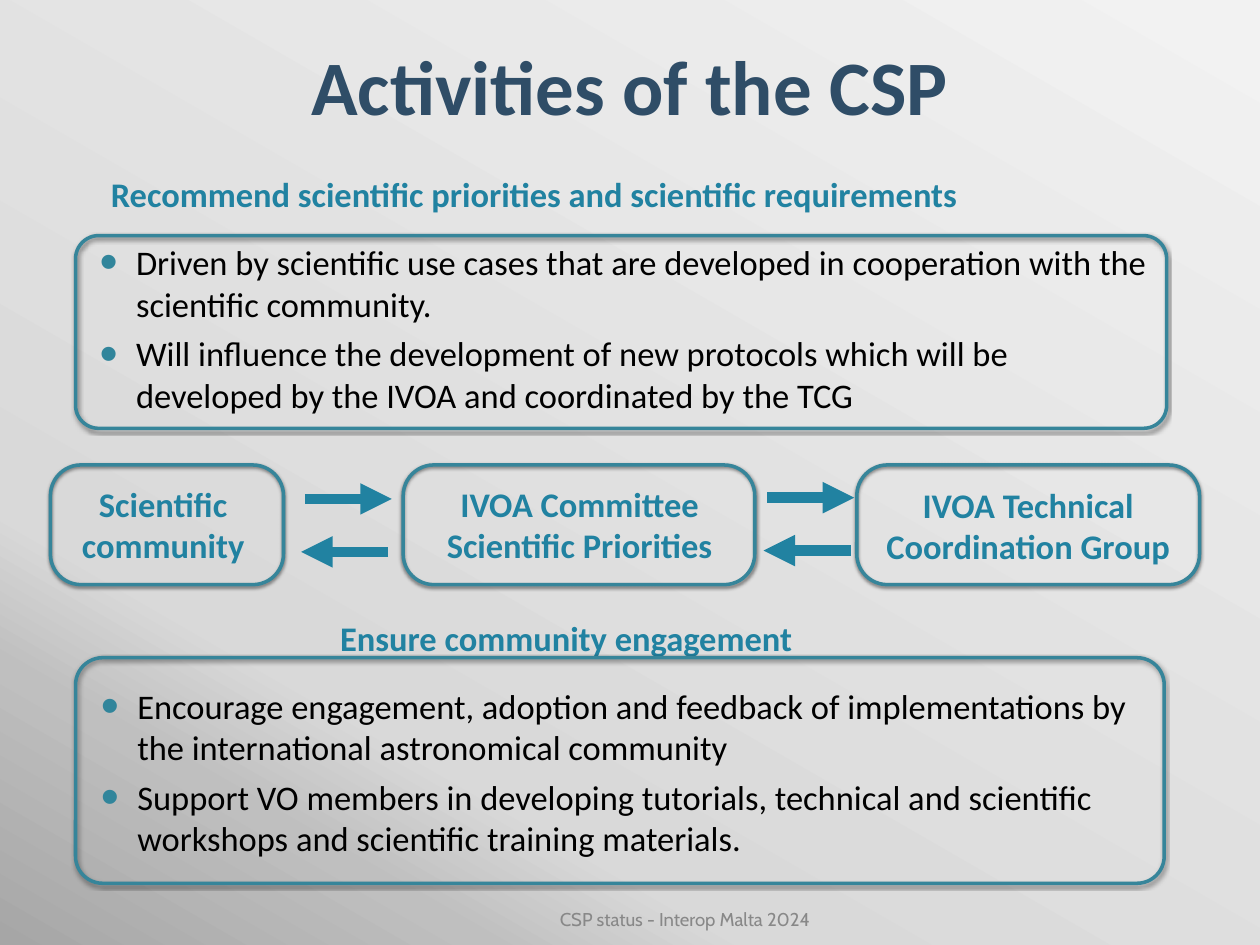
from dataclasses import dataclass

from lxml import etree
from pptx import Presentation
from pptx import util as u
from pptx.dml.color import RGBColor
from pptx.enum import shapes, text
from pptx.oxml import parse_xml
from pptx.oxml.ns import nsdecls, qn


@dataclass(frozen=True)
class Theme:
    title: str = "2F4D67"
    accent: str = "2182A1"
    outline: str = "36859A"
    bullet: str = "31859B"
    body: str = "000000"
    footer: str = "888888"
    font: str = "Calibri"
    footer_font: str = "Cabin"
    title_size: float = 44
    body_size: float = 19.7
    footer_size: float = 10.6
    background: tuple = ((0, "F2F2F2"), (74, "D9D9D9"), (83, "BFBFBF"), (100, "A6A6A6"))


@dataclass(frozen=True)
class Area:
    left: float
    top: float
    width: float
    height: float

    def lengths(self) -> list:
        return [u.Pt(v) for v in (self.left, self.top, self.width, self.height)]


@dataclass(frozen=True)
class Section:
    heading: str
    heading_area: Area
    bullets: tuple
    bullet_area: Area
    frame: Area


@dataclass(frozen=True)
class Node:
    label: str
    label_area: Area
    frame_left: float
    frame_width: float


THEME = Theme()
NODE_TOP, NODE_HEIGHT = 265.68, 68.4
ARROW_LENGTH = 49.68
RETURN_SHIFT, RETURN_DROP = -2.16, 30.24

SECTIONS = (
    Section(
        "Recommend scientific priorities and scientific requirements",
        Area(60.48, 95.76, 595.44, 29.52),
        ("Driven by scientific use cases that are developed in cooperation with the "
         "scientific community.",
         "Will influence the development of new protocols which will be developed by "
         "the IVOA and coordinated by the TCG"),
        Area(54, 134.64, 612, 105.84),
        Area(43.2, 134.64, 623.52, 110.16),
    ),
    Section(
        "Ensure community engagement",
        Area(191.52, 349.92, 321.12, 29.52),
        ("Encourage engagement, adoption and feedback of implementations by the "
         "international astronomical community",
         "Support VO members in developing tutorials, technical and scientific "
         "workshops and scientific training materials."),
        Area(54.72, 388.08, 612, 105.84),
        Area(43.2, 375.84, 622.08, 128.88),
    ),
)

NODES = (
    Node("Scientific community", Area(25.92, 272.88, 134.64, 53.28), 28.8, 133.2),
    Node("IVOA Committee Scientific Priorities",
         Area(235.44, 272.88, 191.52, 53.28), 230.4, 200.88),
    Node("IVOA Technical Coordination Group",
         Area(488.88, 273.6, 197.28, 53.28), 489.6, 195.84),
)

# Left end and height of the forward arrow in each gap
EXCHANGES = ((174.24, 285.12), (438.48, 284.4))


def paint_background(page) -> None:
    fill = page.background.fill
    fill.gradient()
    fill.gradient_angle = 240
    stops = page.background._cSld.find(".//" + qn("a:gsLst"))
    for stop in list(stops):
        stops.remove(stop)
    for position, color in THEME.background:
        stop = etree.SubElement(stops, qn("a:gs"), pos=str(position * 1000))
        etree.SubElement(stop, qn("a:srgbClr"), val=color)


def add_bullet(para) -> None:
    properties = para._p.get_or_add_pPr()
    properties.set("marL", str(u.Pt(20.88)))
    properties.set("indent", str(u.Pt(-20.88)))
    color = etree.SubElement(properties, qn("a:buClr"))
    etree.SubElement(color, qn("a:srgbClr"), val=THEME.bullet)
    etree.SubElement(properties, qn("a:buSzPct"), val="150000")
    etree.SubElement(properties, qn("a:buFont"), typeface="Arial")
    etree.SubElement(properties, qn("a:buChar"), char="•")


def add_text(page, area: Area, *lines: str, size: float = THEME.body_size,
             color: str = THEME.accent, font: str = THEME.font, bold: bool = False,
             align=text.PP_ALIGN.LEFT, bullets: bool = False, gap: float = 0,
             spacing: float = 1.0, margins: tuple = (2.88, 2.88), grow: bool = True) -> None:
    box = page.shapes.add_textbox(*area.lengths())
    frame = box.text_frame
    frame.word_wrap = True
    frame.auto_size = (text.MSO_AUTO_SIZE.SHAPE_TO_FIT_TEXT if grow
                       else text.MSO_AUTO_SIZE.NONE)
    frame.vertical_anchor = text.MSO_ANCHOR.MIDDLE
    frame.margin_left = frame.margin_right = u.Pt(margins[0])
    frame.margin_top = frame.margin_bottom = u.Pt(margins[1])
    for index, line in enumerate(lines):
        para = frame.add_paragraph() if index else frame.paragraphs[0]
        if bullets:
            add_bullet(para)
        para.alignment = align
        para.line_spacing = spacing
        para.space_before = u.Pt(gap if index else 0)
        span = para.add_run()
        span.text = line
        span.font.size, span.font.name, span.font.bold = u.Pt(size), font, bold
        span.font.color.rgb = RGBColor.from_string(color)


def add_frame(page, area: Area, rounding: float) -> None:
    shape = page.shapes.add_shape(shapes.MSO_SHAPE.ROUNDED_RECTANGLE, *area.lengths())
    shape.adjustments[0] = rounding
    shape.fill.background()
    shape.line.color.rgb = RGBColor.from_string(THEME.outline)
    shape.line.width = u.Pt(2)
    shape.shadow.inherit = False
    shape._element.spPr.find(qn("a:effectLst")).append(parse_xml(
        f'<a:outerShdw {nsdecls("a")} blurRad="{u.Pt(2)}" dist="{u.Pt(1)}" '
        'dir="5400000" rotWithShape="0"><a:srgbClr val="000000">'
        '<a:alpha val="50000"/></a:srgbClr></a:outerShdw>'))


def add_arrow(page, start: float, end: float, height: float) -> None:
    arrow = page.shapes.add_connector(
        shapes.MSO_CONNECTOR.STRAIGHT, u.Pt(start), u.Pt(height), u.Pt(end), u.Pt(height))
    arrow.line.color.rgb = RGBColor.from_string(THEME.accent)
    arrow.line.width = u.Pt(6)
    etree.SubElement(arrow.line._get_or_add_ln(), qn("a:tailEnd"), type="triangle")
    etree.SubElement(arrow._element.spPr, qn("a:effectLst"))


def main() -> None:
    deck = Presentation()
    deck.slide_width, deck.slide_height = u.Pt(720), u.Pt(540)
    page = deck.slides.add_slide(deck.slide_layouts[6])
    paint_background(page)
    center = text.PP_ALIGN.CENTER

    # Title
    add_text(page, Area(72.72, 12.96, 574.56, 77.76), "Activities of the CSP",
             size=THEME.title_size, color=THEME.title, bold=True, align=center,
             spacing=0.9, margins=(7.2, 3.6), grow=False)

    # Headed sections with framed bullets
    for section in SECTIONS:
        add_text(page, section.bullet_area, *section.bullets, color=THEME.body,
                 bullets=True, gap=4.9)
        add_text(page, section.heading_area, section.heading, bold=True)
        add_frame(page, section.frame, 0.12)

    # Groups that exchange priorities
    for node in NODES:
        add_text(page, node.label_area, node.label, bold=True, align=center)
        add_frame(page, Area(node.frame_left, NODE_TOP, node.frame_width, NODE_HEIGHT), 0.256)

    # Forward and return arrows
    for left, height in EXCHANGES:
        right = left + ARROW_LENGTH
        add_arrow(page, left, right, height)
        add_arrow(page, right + RETURN_SHIFT, left + RETURN_SHIFT, height + RETURN_DROP)

    # Footer
    add_text(page, Area(276.48, 516.96, 229.68, 18.72), "CSP status - Interop Malta 2024",
             size=THEME.footer_size, color=THEME.footer, font=THEME.footer_font,
             align=center, spacing=0.9, margins=(3.6, 3.6))

    deck.save("out.pptx")


if __name__ == "__main__":
    main()
